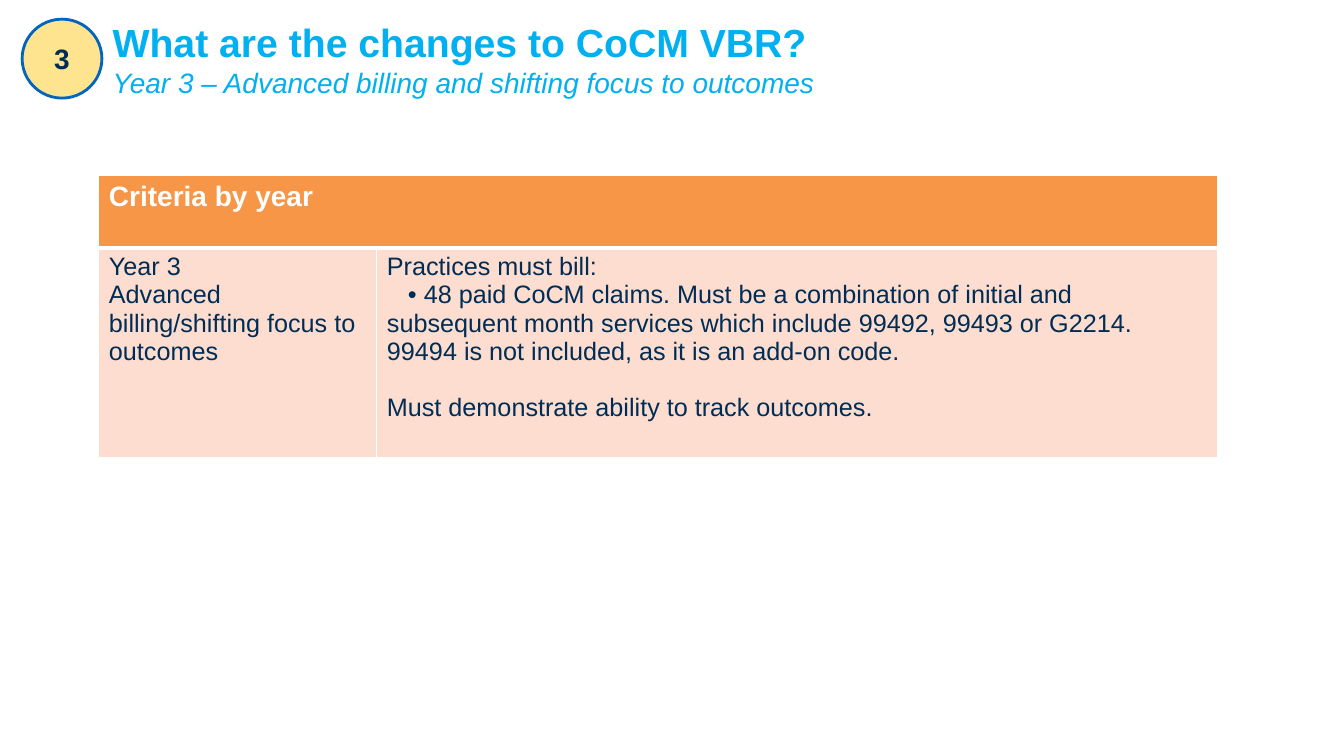
from dataclasses import dataclass

from lxml.etree import SubElement
from pptx import Presentation
from pptx.dml.color import RGBColor
from pptx.enum.shapes import MSO_SHAPE
from pptx.enum.text import MSO_ANCHOR, PP_ALIGN
from pptx.oxml.ns import qn
from pptx.util import Pt


@dataclass(frozen=True)
class Theme:
    font: str = "Arial"
    title: str = "00B0F0"
    ink: str = "002D55"
    white: str = "FFFFFF"
    head: str = "F79646"
    body: str = "FCDDCF"
    badge: str = "FFE48F"
    ring: str = "0065BF"
    big: int = 28
    mid: int = 20
    small: int = 18


THEME = Theme()


def paint(item, color):
    item.fill.solid()
    item.fill.fore_color.rgb = RGBColor.from_string(color)


def write(frame, lines, size, color, bold=False):
    """Fill a text frame, one paragraph a line, and return the paragraphs."""
    frame.word_wrap = True
    frame.text = "\n".join(lines)
    for para in frame.paragraphs:
        font = para.font
        font.name, font.size, font.bold = THEME.font, Pt(size), bold
        font.color.rgb = RGBColor.from_string(color)
    return frame.paragraphs


def edge(cell, **widths):
    """Give the cell white borders; sides are L, R, T and B."""
    props = cell._tc.get_or_add_tcPr()
    for index, side in enumerate("LRTB"):
        line = SubElement(props, qn(f"a:ln{side}"), w=str(Pt(widths.get(side, 1))))
        fill = SubElement(line, qn("a:solidFill"))
        SubElement(fill, qn("a:srgbClr"), val=THEME.white)
        props.insert(index, line)


def add_title(slide, title, subtitle):
    frame = slide.shapes.add_textbox(Pt(73.4), Pt(23.8), Pt(880), Pt(36.7)).text_frame
    frame.vertical_anchor = MSO_ANCHOR.MIDDLE
    top, sub = write(frame, [title, subtitle], THEME.big, THEME.title, True)
    sub.font.size = Pt(THEME.mid)
    sub.font.bold, sub.font.italic = False, True


def add_table(slide, head, rows, widths, heights):
    """Add a table whose heading spans all columns; return the table."""
    table = slide.shapes.add_table(
        len(rows) + 1, len(widths), Pt(70.6), Pt(125.5), Pt(sum(widths)), Pt(sum(heights))
    ).table
    table.first_row = table.horz_banding = False
    for column, width in zip(table.columns, widths):
        column.width = Pt(width)
    for row, height in zip(table.rows, heights):
        row.height = Pt(height)
    for cell in table.rows[0].cells:
        paint(cell, THEME.head)
        edge(cell, B=3)
    table.cell(0, 0).merge(table.cell(0, len(widths) - 1))
    write(table.cell(0, 0).text_frame, [head], THEME.mid, THEME.white, True)
    for r, texts in enumerate(rows, 1):
        for c, lines in enumerate(texts):
            cell = table.cell(r, c)
            paint(cell, THEME.body)
            edge(cell, T=3 if r == 1 else 1)
            write(cell.text_frame, lines, THEME.small, THEME.ink)
    return table


def add_badge(slide, label):
    badge = slide.shapes.add_shape(MSO_SHAPE.OVAL, Pt(15.8), Pt(13.7), Pt(57), Pt(56.4))
    badge.shadow.inherit = False
    paint(badge, THEME.badge)
    badge.line.color.rgb = RGBColor.from_string(THEME.ring)
    badge.line.width = Pt(2)
    frame = badge.text_frame
    frame.margin_left = frame.margin_right = frame.margin_top = frame.margin_bottom = 0
    frame.vertical_anchor = MSO_ANCHOR.MIDDLE
    write(frame, [label], THEME.mid, THEME.ink, True)[0].alignment = PP_ALIGN.CENTER


def main():
    deck = Presentation()
    deck.slide_width, deck.slide_height = Pt(960), Pt(540)
    slide = deck.slides.add_slide(deck.slide_layouts[6])
    add_title(
        slide,
        "What are the changes to CoCM VBR?",
        "Year 3 – Advanced billing and shifting focus to outcomes",
    )
    year = ["Year 3", "Advanced billing/shifting focus to outcomes"]
    rules = [
        "Practices must bill:",
        "• 48 paid CoCM claims. Must be a combination of initial and subsequent month "
        "services which include 99492, 99493 or G2214. 99494 is not included, "
        "as it is an add-on code.",
        "Must demonstrate ability to track outcomes.",
    ]
    table = add_table(slide, "Criteria by year", [[year, rules]], [198.6, 600.4], [51.5, 150])
    bill, claims, track = table.cell(1, 1).text_frame.paragraphs
    claims._p.get_or_add_pPr().set("indent", str(Pt(15)))
    track.space_before = Pt(20)
    add_badge(slide, "3")
    deck.save("out.pptx")


if __name__ == "__main__":
    main()
